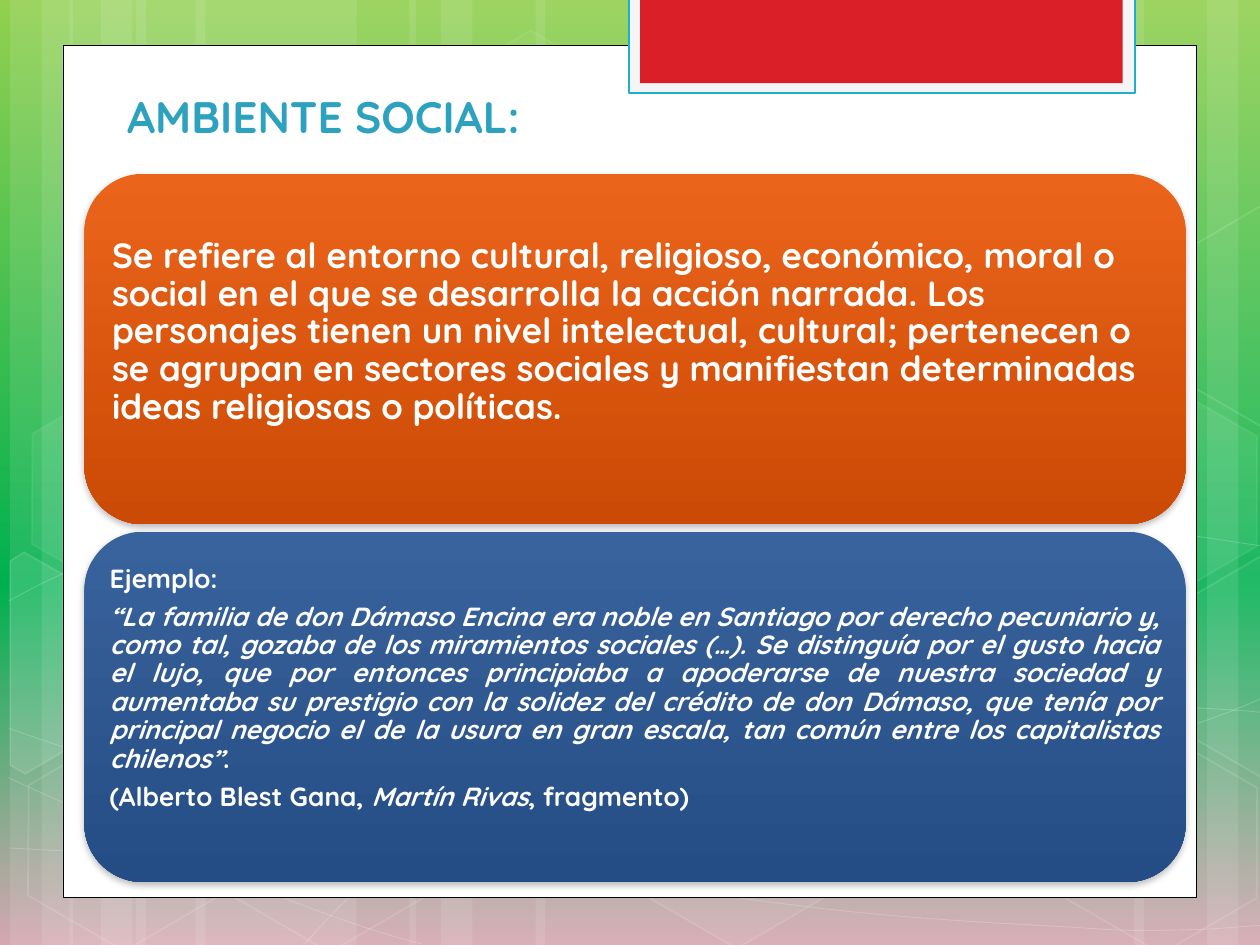
import math
from copy import deepcopy

from lxml import etree
from pptx import Presentation
from pptx import util as u
from pptx.dml.color import RGBColor
from pptx.enum import shapes, text
from pptx.oxml.ns import qn

WHITE = "FFFFFF"
TILT = 30


def rgb(code):
    return RGBColor.from_string(code)


def paint(fill, color, opacity=100):
    fill.solid()
    fill.fore_color.rgb = rgb(color)
    if opacity < 100:
        solid = fill._xPr.find(qn("a:solidFill"))
        etree.SubElement(solid[0], qn("a:alpha")).set("val", str(opacity * 1000))


def blend(fill, stops):
    fill.gradient()
    fill.gradient_angle = 270
    first = fill.gradient_stops[0]._gs
    while len(fill.gradient_stops) < len(stops):
        first.addnext(deepcopy(first))
    for stop, (position, color) in zip(fill.gradient_stops, stops):
        stop.position = position
        stop.color.rgb = rgb(color)


def turn_back(points, center):
    angle = math.radians(-TILT)
    cos, sin = math.cos(angle), math.sin(angle)
    cx, cy = center
    return [(cx + (x - cx) * cos - (y - cy) * sin, cy + (x - cx) * sin + (y - cy) * cos)
            for x, y in points]


def bend(shape):
    lines = list(shape._element.iter(qn("a:lnTo")))
    for i in range(0, len(lines), 3):
        curve = etree.Element(qn("a:cubicBezTo"))
        lines[i].addprevious(curve)
        for line in lines[i:i + 3]:
            curve.append(line[0])
            line.getparent().remove(line)


class SlideBuilder:
    font = "Quicksand"

    def __init__(self, slide):
        self.slide = slide

    def background(self, stops):
        blend(self.slide.background.fill, stops)

    def style(self, shape, fill=None, opacity=100, line=None, width=1, line_opacity=100):
        shape.shadow.inherit = False
        if fill:
            paint(shape.fill, fill, opacity)
        else:
            shape.fill.background()
        if line:
            shape.line.width = u.Pt(width)
            paint(shape.line.fill, line, line_opacity)
        else:
            shape.line.fill.background()
        return shape

    def preset(self, kind, box, **look):
        shape = self.slide.shapes.add_shape(kind, *map(u.Inches, box))
        return self.style(shape, **look)

    def rect(self, box, **look):
        return self.preset(shapes.MSO_SHAPE.RECTANGLE, box, **look)

    def hexagon(self, left, top, opacity, line_opacity):
        shape = self.preset(shapes.MSO_SHAPE.HEXAGON, (left, top, 1.75, 1.52),
                            fill=WHITE if opacity else None, opacity=opacity,
                            line=WHITE, line_opacity=line_opacity)
        shape.adjustments[0] = 0.285
        shape.rotation = TILT

    def outline(self, points, closed, **look):
        start, *rest = [(u.Inches(x), u.Inches(y)) for x, y in points]
        builder = self.slide.shapes.build_freeform(*start)
        builder.add_line_segments(rest, close=closed)
        return self.style(builder.convert_to_shape(), line=WHITE, **look)

    def curve(self, points):
        bend(self.outline(points, False, width=0.5, line_opacity=20))

    def cut_hexagon(self, points, center, opacity):
        shape = self.outline(turn_back(points, center), True, line_opacity=12,
                             fill=WHITE if opacity else None, opacity=opacity)
        shape.rotation = TILT

    def card(self, top, stops):
        shape = self.preset(shapes.MSO_SHAPE.ROUNDED_RECTANGLE, (0.67, top, 8.74, 2.78))
        blend(shape.fill, stops)
        effects = shape._element.spPr.find(qn("a:effectLst"))
        shadow = etree.SubElement(effects, qn("a:outerShdw"), blurRad=str(u.Pt(4)),
                                  dist=str(u.Pt(2)), dir="5400000", rotWithShape="0")
        black = etree.SubElement(shadow, qn("a:srgbClr"), val="000000")
        etree.SubElement(black, qn("a:alpha"), val="28000")

    def text(self, box, paragraphs, size, color=WHITE, anchor=text.MSO_ANCHOR.MIDDLE,
             align=text.PP_ALIGN.LEFT, insets=(0.1, 0.05, 0.1, 0.05), spacing=1, after=0):
        frame = self.slide.shapes.add_textbox(*map(u.Inches, box)).text_frame
        frame.word_wrap = True
        frame.vertical_anchor = anchor
        (frame.margin_left, frame.margin_top,
         frame.margin_right, frame.margin_bottom) = map(u.Inches, insets)
        for i, pieces in enumerate(paragraphs):
            paragraph = frame.add_paragraph() if i else frame.paragraphs[0]
            paragraph.alignment = align
            paragraph.line_spacing = spacing
            paragraph.space_after = u.Pt(after)
            paragraph.font.name = self.font
            paragraph.font.size = u.Pt(size)
            paragraph.font.bold = True
            paragraph.font.color.rgb = rgb(color)
            for words, italic in pieces:
                run = paragraph.add_run()
                run.text = words
                if italic:
                    run.font.italic = True


STRIPES = [(1.08, 1.75), (0.08, 0.5), (0.33, 0.83), (1.55, 1.75), (0.55, 0.5), (0.8, 0.83),
           (7.33, 1.75), (9.58, 0.5), (9, 0.83), (4.25, 3.08), (3.25, 0.5), (3.5, 0.83)]
CURVES = [
    [(0.07, 6.73), (0.61, 6.76), (1.15, 6.79), (1.9, 6.78), (2.65, 6.77), (3.58, 6.75),
     (4.58, 6.65), (5.58, 6.55), (7, 6.36), (7.92, 6.17), (8.83, 5.98), (9.77, 5.68),
     (10.07, 5.51)],
    [(0.07, 4.77), (0.36, 4.61), (0.65, 4.46), (1.21, 4.31), (1.78, 4.16), (2.59, 3.94),
     (3.47, 3.87), (4.36, 3.8), (5.44, 3.79), (6.54, 3.87), (7.64, 3.95), (9.47, 4.26),
     (10.07, 4.34)],
    [(0.06, 6.17), (1.27, 6.72), (2.47, 7.27), (3.34, 7.49)],
    [(0.07, 5.78), (0.38, 5.89), (0.7, 6), (1.28, 6.16), (1.86, 6.31), (2.73, 6.56),
     (3.57, 6.73), (4.4, 6.9), (5.45, 7.08), (6.28, 7.18), (7.11, 7.29), (8, 7.33),
     (8.53, 7.36), (9.05, 7.4), (9.19, 7.38), (9.45, 7.38), (9.71, 7.37), (9.89, 7.35),
     (10.07, 7.34)],
    [(2.42, 7.49), (2.6, 7.29), (2.78, 7.09), (3.02, 6.91), (3.26, 6.73), (3.6, 6.53),
     (3.88, 6.39), (4.16, 6.25), (4.33, 6.19), (4.7, 6.09), (5.06, 5.99), (5.73, 5.85),
     (6.08, 5.78), (6.44, 5.71), (6.49, 5.71), (6.8, 5.69), (7.11, 5.66), (7.6, 5.63),
     (7.94, 5.62), (8.29, 5.61), (8.86, 5.62), (8.86, 5.62), (9.08, 5.62), (9.3, 5.62),
     (9.53, 5.62), (9.71, 5.63), (9.88, 5.64), (9.97, 5.65), (10.06, 5.66), (10.03, 5.65),
     (10.06, 5.66)],
]
HEXAGONS = [(3.34, 0.36, 4, 8), (4.97, 5.89, 6, 12), (0.11, 5.91, 0, 12), (0.14, 3.12, 7, 8),
            (1.74, 5.92, 0, 12), (7.53, 4.53, 10, 12), (8.34, 5.93, 0, 12), (8.34, 3.14, 7, 8)]
LEFT_CUT = [(0.08, 4.45), (0.19, 4.38), (0.96, 4.82), (0.95, 5.7), (0.2, 6.14), (0.08, 6.07)]
RIGHT_CUT = [(9.26, 4.85), (10.01, 4.41), (10.09, 4.46), (10.09, 6.13), (10.02, 6.17),
             (9.26, 5.73)]
UPPER_CUT = [(x, y - 2.78) for x, y in RIGHT_CUT]
CUTS = [(LEFT_CUT, (0.36, 5.35), 10), (RIGHT_CUT, (9.85, 5.2), 4), (UPPER_CUT, (9.85, 2.41), 0)]

DEFINITION = [[("Se refiere al entorno cultural, religioso, económico, moral o social en el que "
                "se desarrolla la acción narrada. Los personajes tienen un nivel intelectual, "
                "cultural; pertenecen o se agrupan en sectores sociales y manifiestan "
                "determinadas ideas religiosas o políticas.", False)]]
EXAMPLE = [
    [("Ejemplo:", False)],
    [("“La familia de don Dámaso Encina era noble en Santiago por derecho pecuniario y, como "
      "tal, gozaba de los miramientos sociales (…). Se distinguía por el gusto hacia el lujo, "
      "que por entonces principiaba a apoderarse de nuestra sociedad y aumentaba su prestigio "
      "con la solidez del crédito de don Dámaso, que tenía por principal negocio el de la usura "
      "en gran escala, tan común entre los capitalistas chilenos”", True), (".", False)],
    [("(Alberto Blest Gana, ", False), ("Martín Rivas", True), (", fragmento)", False)],
]


def main():
    deck = Presentation()
    deck.slide_width, deck.slide_height = u.Inches(10), u.Inches(7.5)
    page = SlideBuilder(deck.slides.add_slide(deck.slide_layouts[6]))

    page.background([(0, "92D050"), (0.62, "00B050"), (1, "D5A7B1")])
    for left, width in STRIPES:
        page.rect((left, 0, width, 7.5), fill=WHITE, opacity=10)
    for curve in CURVES:
        page.curve(curve)
    for hexagon in HEXAGONS:
        page.hexagon(*hexagon)
    for cut in CUTS:
        page.cut_hexagon(*cut)

    page.rect((0.5, 0.36, 9, 6.76), fill=WHITE, line="000000", width=0.5)
    page.rect((4.99, -0.02, 4.02, 0.76), fill="F5F5F5", line="1FAECD", width=1.25)
    page.rect((5.08, -0.02, 3.83, 0.68), fill="DA1F28")
    page.text((0.91, 0.84, 7.68, 0.34), [[("AMBIENTE SOCIAL:", False)]], 25.2,
              color="2DA2BF", anchor=text.MSO_ANCHOR.BOTTOM)

    page.card(1.38, [(0, "EB641B"), (1, "CB4A05")])
    page.text((0.8, 1.51, 8.47, 2.51), DEFINITION, 20,
              insets=(0.09, 0.08, 0.08, 0.33), spacing=0.9)
    page.card(4.22, [(0, "39639D"), (1, "254D85")])
    page.text((0.8, 4.36, 8.47, 2.51), EXAMPLE, 15, align=text.PP_ALIGN.JUSTIFY,
              insets=(0.07, 0.06, 0.06, 0.36), spacing=0.9, after=5.5)

    deck.save("out.pptx")


if __name__ == "__main__":
    main()
